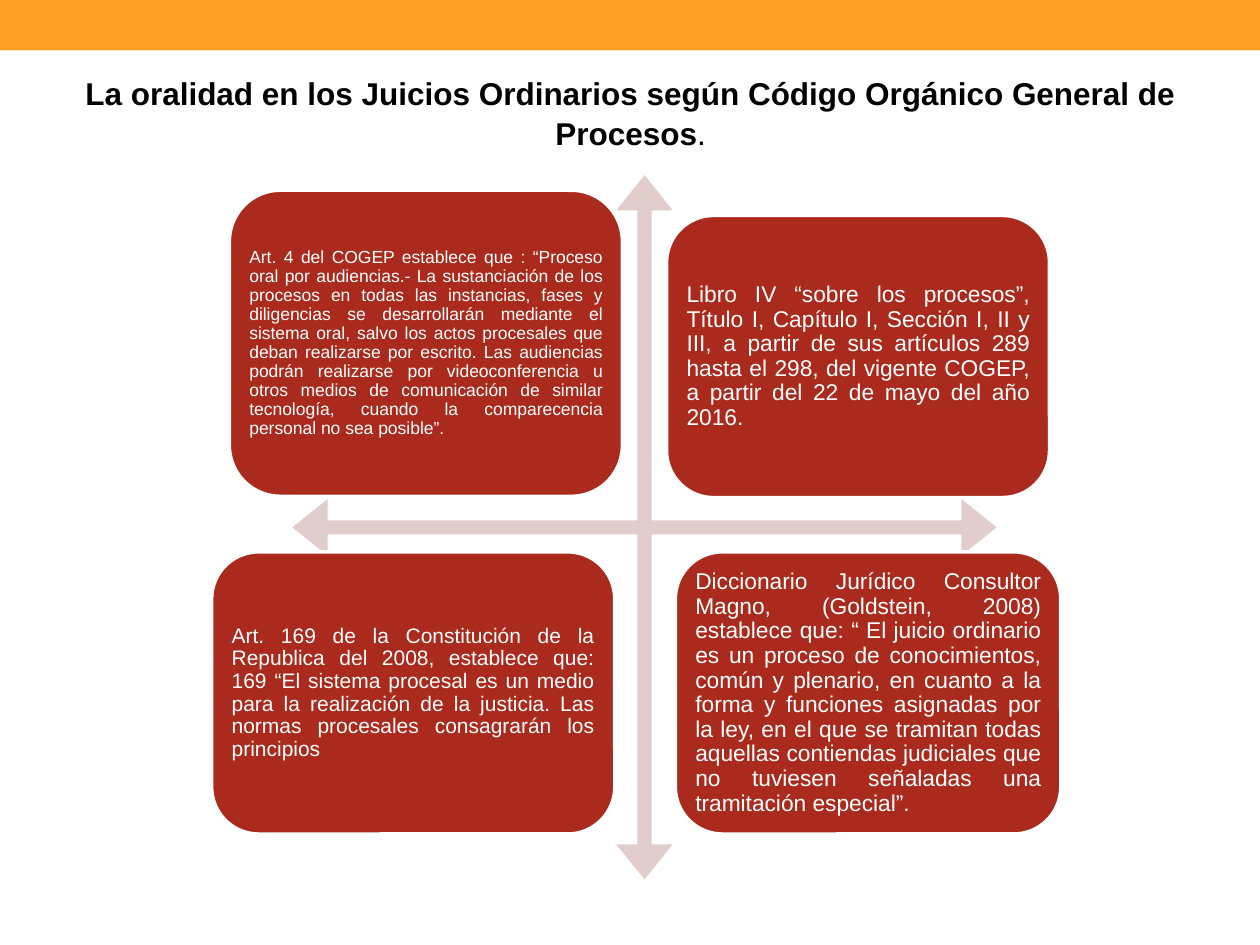
from pptx import Presentation
from pptx.dml.color import RGBColor
from pptx.enum.shapes import MSO_SHAPE as SHAPE
from pptx.enum.text import MSO_ANCHOR as ANCHOR, MSO_AUTO_SIZE as AUTO, PP_ALIGN as ALIGN
from pptx.util import Inches, Pt

ORANGE = RGBColor(0xFD, 0xA0, 0x23)
RED = RGBColor(0xAA, 0x2B, 0x1E)
PINK = RGBColor(0xE2, 0xCD, 0xCD)
WHITE = RGBColor(0xFF, 0xFF, 0xFF)
BLACK = RGBColor(0, 0, 0)

prs = Presentation()
prs.slide_width, prs.slide_height = Inches(10), Inches(7.5)
COL = prs.slide_width / 100
ROW = prs.slide_height / 75
s = prs.slides.add_slide(prs.slide_layouts[5])


def cells(col, row, cols, rows):
    """Turn grid columns and rows into left, top, width and height."""
    return int(col * COL), int(row * ROW), int(cols * COL), int(rows * ROW)


def add_filled(kind, area, color):
    sp = s.shapes.add_shape(kind, *cells(*area))
    sp.shadow.inherit = False
    sp.fill.solid()
    sp.fill.fore_color.rgb = color
    sp.line.fill.background()
    return sp


add_filled(SHAPE.RECTANGLE, (0, 0, 100, 4), ORANGE)

# Title
title = s.shapes.title
title.left, title.top, title.width, title.height = cells(2.8, 5.2, 94.5, 7.1)
tf = title.text_frame
for name, value in {"word_wrap": True, "auto_size": AUTO.NONE,
                    "vertical_anchor": ANCHOR.TOP}.items():
    setattr(tf, name, value)
p = tf.paragraphs[0]
p.alignment, p.line_spacing = ALIGN.CENTER, 1.06
for text, bold in [("La oralidad en los Juicios Ordinarios según Código Orgánico "
                    "General de Procesos", True), (".", False)]:
    r = p.add_run()
    r.text = text
    for name, value in {"name": "Arial", "size": Pt(18), "bold": bold}.items():
        setattr(r.font, name, value)
    r.font.color.rgb = BLACK

# Crossed arrows behind the four cards
cross = add_filled(SHAPE.QUAD_ARROW, (23.2, 13.9, 55.9, 55.9), PINK)
for i, share in enumerate((0.02, 0.04, 0.05)):
    cross.adjustments[i] = share

# Cards: grid area, text size, inner margin, text
CARDS = [
    ((18.2, 15.1, 31.2, 24.3), 10, 0.04,
     "Art. 4 del COGEP establece que : “Proceso oral por audiencias.- La sustanciación "
     "de los procesos en todas las instancias, fases y diligencias se desarrollarán "
     "mediante el sistema oral, salvo los actos procesales que deban realizarse por "
     "escrito. Las audiencias podrán realizarse por videoconferencia u otros medios de "
     "comunicación de similar tecnología, cuando la comparecencia personal no sea "
     "posible”."),
    ((52.9, 17.1, 30.4, 22.4), 13, 0.05,
     "Libro IV “sobre los procesos”, Título I, Capítulo I, Sección I, II y III, a partir "
     "de sus artículos 289 hasta el 298, del vigente COGEP, a partir del 22 de mayo del "
     "año 2016."),
    ((16.8, 43.8, 32, 22.4), 12, 0.05,
     "Art. 169 de la Constitución de la Republica del 2008, establece que: 169 “El "
     "sistema procesal es un medio para la realización de la justicia. Las normas "
     "procesales consagrarán los principios"),
    ((53.6, 43.8, 30.6, 22.4), 13, 0.05,
     "Diccionario Jurídico Consultor Magno, (Goldstein, 2008) establece que: “ El juicio "
     "ordinario es un proceso de conocimientos, común y plenario, en cuanto a la forma y "
     "funciones asignadas por la ley, en el que se tramitan todas aquellas contiendas "
     "judiciales que no tuviesen señaladas una tramitación especial”."),
]
for area, size, margin, text in CARDS:
    card = add_filled(SHAPE.ROUNDED_RECTANGLE, area, RED)
    card.line.color.rgb = WHITE
    card.line.width = Pt(2.08)
    tf = card.text_frame
    tf.word_wrap, tf.vertical_anchor = True, ANCHOR.MIDDLE
    for side in ("left", "top", "right", "bottom"):
        setattr(tf, f"margin_{side}", Inches(margin))
    p = tf.paragraphs[0]
    p.alignment, p.line_spacing = ALIGN.JUSTIFY, 0.9
    r = p.add_run()
    r.text = text
    r.font.name, r.font.size = "Arial", Pt(size)
    r.font.color.rgb = WHITE

prs.save("out.pptx")
